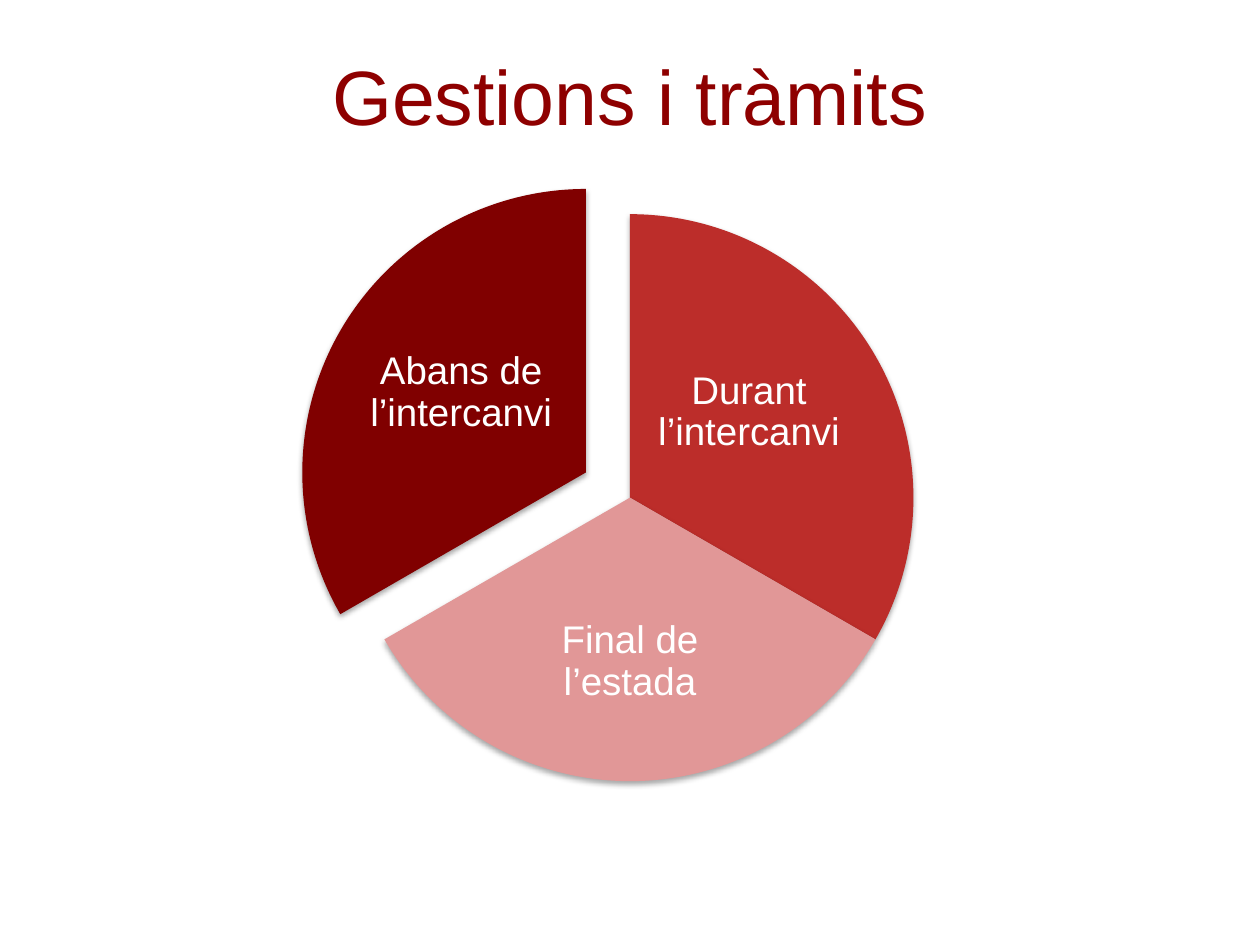
"""Build a slide with a three-part pie of exchange procedures."""
import dataclasses

import lxml.etree
import pptx
import pptx.dml.color
import pptx.enum.shapes
import pptx.enum.text
import pptx.oxml.ns
import pptx.util


@dataclasses.dataclass(frozen=True)
class Theme:
    font: str = "Arial"
    title_size: int = 44
    label_size: int = 22
    title_color: str = "8E0000"
    label_color: str = "FFFFFF"
    shadow_color: str = "000000"


THEME = Theme()
WIDTH, HEIGHT = 10, 7.5
TITLE = "Gestions i tràmits"
TITLE_FRAME = (0.75, 0.13, 8.5, 1.25)
DIAMETER = 0.6 * HEIGHT
PIE_CENTER = (WIDTH / 2, 3.95)
FIRST_ANGLE = 270
EXPLOSION = (-0.35, -0.2)
STILL = (0, 0)

# Label centers and sizes are shares of the pie's diameter.
SECTORS = [
    {"text": "Durant l’intercanvi", "color": "BC2D2A", "shift": STILL,
     "label_center": (0.21, -0.15), "label_size": (0.34, 0.33)},
    {"text": "Final de l’estada", "color": "E19797", "shift": STILL,
     "label_center": (0, 0.29), "label_size": (0.45, 0.31)},
    {"text": "Abans de l’intercanvi", "color": "800000", "shift": EXPLOSION,
     "label_center": (-0.22, -0.14), "label_size": (0.34, 0.33)},
]


def rgb(color):
    return pptx.dml.color.RGBColor.from_string(color)


def centered_frame(center, size):
    return (center[0] - size[0] / 2, center[1] - size[1] / 2, *size)


def inches(frame):
    return [pptx.util.Inches(length) for length in frame]


def add_text(shapes, text, frame, size, color, margin, line_spacing=1.0):
    text_frame = shapes.add_textbox(*inches(frame)).text_frame
    text_frame.word_wrap = True
    text_frame.vertical_anchor = pptx.enum.text.MSO_ANCHOR.MIDDLE
    for side in ("left", "top", "right", "bottom"):
        setattr(text_frame, f"margin_{side}", pptx.util.Inches(margin))
    paragraph = text_frame.paragraphs[0]
    paragraph.alignment = pptx.enum.text.PP_ALIGN.CENTER
    paragraph.line_spacing = line_spacing
    run = paragraph.add_run()
    run.text = text
    run.font.name = THEME.font
    run.font.size = pptx.util.Pt(size)
    run.font.color.rgb = rgb(color)


def add_shadow(shape):
    qn = pptx.oxml.ns.qn
    shape.shadow.inherit = False
    effects = shape._element.spPr.find(qn("a:effectLst"))
    shadow = lxml.etree.SubElement(
        effects, qn("a:outerShdw"), blurRad=str(pptx.util.Pt(3.1)),
        dist=str(pptx.util.Pt(1.8)), dir="5400000", rotWithShape="0")
    color = lxml.etree.SubElement(shadow, qn("a:srgbClr"), val=THEME.shadow_color)
    lxml.etree.SubElement(color, qn("a:alpha"), val="35000")


def add_sector(shapes, sector, start, sweep):
    center = [base + shift for base, shift in zip(PIE_CENTER, sector["shift"])]
    shape = shapes.add_shape(pptx.enum.shapes.MSO_SHAPE.PIE,
                             *inches(centered_frame(center, (DIAMETER, DIAMETER))))
    for index, angle in enumerate((start, start + sweep)):
        shape.adjustments[index] = angle % 360 * 0.6
    shape.fill.solid()
    shape.fill.fore_color.rgb = rgb(sector["color"])
    shape.line.fill.background()
    add_shadow(shape)
    label_center = [middle + share * DIAMETER
                    for middle, share in zip(center, sector["label_center"])]
    label_size = [share * DIAMETER for share in sector["label_size"]]
    add_text(shapes, sector["text"], centered_frame(label_center, label_size),
             THEME.label_size, THEME.label_color, 0.03, 0.9)


def main():
    presentation = pptx.Presentation()
    presentation.slide_width = pptx.util.Inches(WIDTH)
    presentation.slide_height = pptx.util.Inches(HEIGHT)
    slide = presentation.slides.add_slide(presentation.slide_layouts[6])
    pie = slide.shapes.add_group_shape()
    sweep = 360 / len(SECTORS)
    for index, sector in enumerate(SECTORS):
        add_sector(pie.shapes, sector, FIRST_ANGLE + index * sweep, sweep)
    add_text(slide.shapes, TITLE, TITLE_FRAME, THEME.title_size, THEME.title_color, 0.1)
    presentation.save("out.pptx")


if __name__ == "__main__":
    main()
